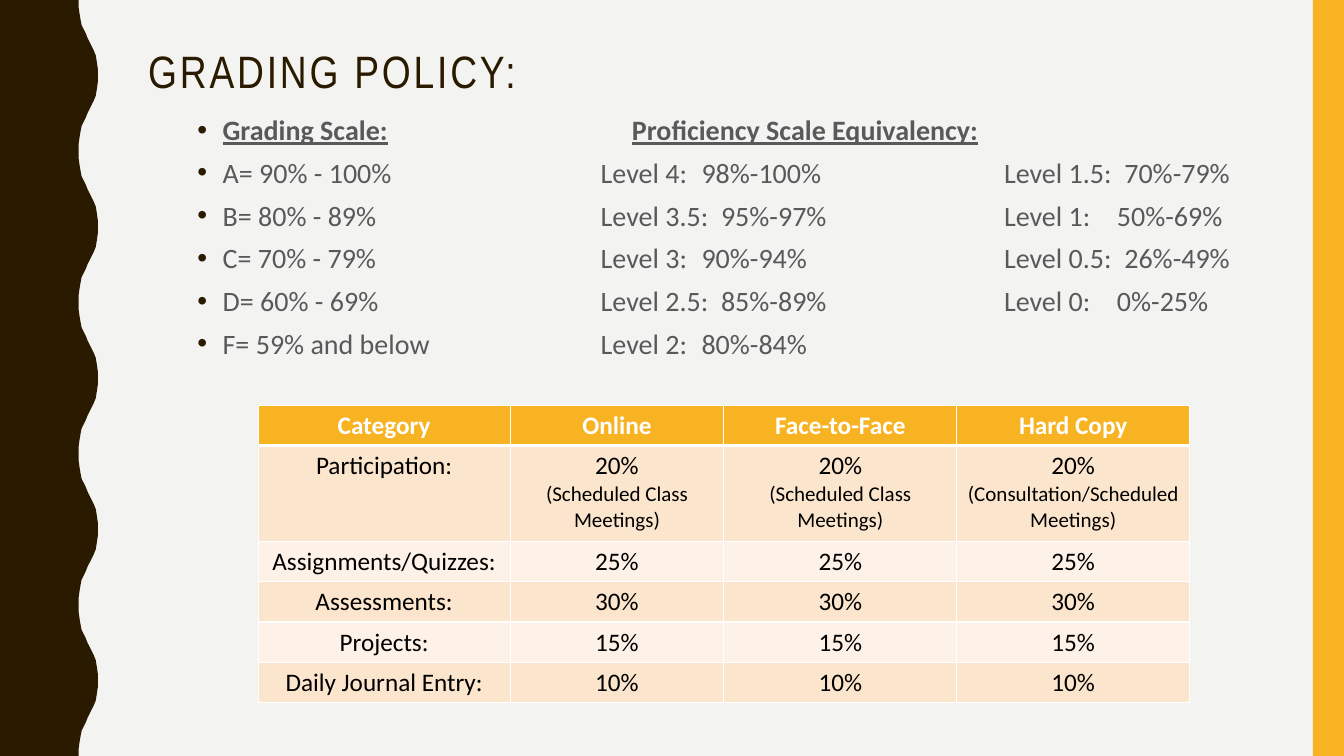
from lxml import etree
from pptx import Presentation
from pptx.dml.color import RGBColor
from pptx.enum.shapes import MSO_SHAPE
from pptx.enum.text import MSO_ANCHOR, MSO_AUTO_SIZE, PP_ALIGN
from pptx.oxml.ns import qn
from pptx.util import Inches, Pt

RECTANGLE = MSO_SHAPE.RECTANGLE
MIDDLE = MSO_ANCHOR.MIDDLE
NO_AUTOFIT = MSO_AUTO_SIZE.NONE
CENTER = PP_ALIGN.CENTER

COLORS = {
    "background": "F3F3F2", "brown": "2A1A00", "gold": "F8B323",
    "gray": "595959", "white": "FFFFFF", "black": "000000",
    "dark_band": "FCE5CD", "light_band": "FEF2E8",
}
TITLE_FONT = "Arial Narrow"
BODY_FONT = "Calibri"

WAVE_PERIOD = 1.5
HALF_WAVE = [
    (0.78, 0), (0.78, 0.07), (0.79, 0.14), (0.8, 0.2), (0.81, 0.25),
    (0.83, 0.29), (0.85, 0.33), (0.87, 0.38), (0.89, 0.42), (0.91, 0.46),
    (0.93, 0.5), (0.95, 0.55), (0.96, 0.61), (0.97, 0.68), (0.97, 0.75),
]

HEADING_STOPS = [4.31]
SCALE_STOPS = [4, 5, 8, 9.12]
SCALE_ROWS = [
    "A= 90% - 100%\tLevel 4:\t98%-100%\tLevel 1.5:  70%-79%",
    "B= 80% - 89%\tLevel 3.5:  95%-97%\tLevel 1:\t50%-69%",
    "C= 70% - 79%\tLevel 3:\t90%-94%\tLevel 0.5:  26%-49%",
    "D= 60% - 69%\tLevel 2.5:  85%-89%\tLevel 0:\t0%-25%",
    "F= 59% and below\tLevel 2:\t80%-84%",
]

COLUMN_WIDTHS = [2.5, 2.12, 2.31, 2.31]
ROW_HEIGHTS = [0.4, 0.95, 0.4, 0.4, 0.4, 0.4]
HEADERS = ["Category", "Online", "Face-to-Face", "Hard Copy"]
MEETINGS = "(Scheduled Class Meetings)"
CONSULTATION = "(Consultation/Scheduled Meetings)"
WEIGHTS = [("Assignments/Quizzes:", "25%"), ("Assessments:", "30%"),
           ("Projects:", "15%"), ("Daily Journal Entry:", "10%")]


def rgb(name):
    """Return the named colour."""
    return RGBColor.from_string(COLORS[name])


def add_run(paragraph, text, size, color, font=BODY_FONT, bold=False, underline=False):
    """Append one formatted run and return it."""
    run = paragraph.add_run()
    run.text = text
    run.font.name = font
    run.font.size = Pt(size)
    run.font.bold = bold
    run.font.underline = underline
    run.font.color.rgb = rgb(color)
    return run


def paint(shape, color):
    """Give a shape a flat fill without line or shadow."""
    shape.shadow.inherit = False
    shape.fill.solid()
    shape.fill.fore_color.rgb = rgb(color)
    shape.line.fill.background()


def add_wavy_edge(slide):
    """Draw the brown band with its repeating wave on the left."""
    mirrored = [(x, WAVE_PERIOD - y) for x, y in reversed(HALF_WAVE[:-1])]
    points = [(x, y + wave * WAVE_PERIOD)
              for wave in range(5) for x, y in HALF_WAVE + mirrored]
    points.append((0, 7.5))
    builder = slide.shapes.build_freeform(0, 0)
    builder.add_line_segments([(Inches(x), Inches(y)) for x, y in points], close=True)
    paint(builder.convert_to_shape(), "brown")


def add_side_bar(slide):
    """Draw the gold bar on the right."""
    bar = slide.shapes.add_shape(RECTANGLE, Inches(13.02), 0, Inches(0.31), Inches(7.5))
    paint(bar, "gold")


def set_title(slide, text):
    """Place and format the slide title."""
    title = slide.shapes.title
    title.left, title.top = Inches(1.37), Inches(0.42)
    title.width, title.height = Inches(11.13), Inches(0.62)
    frame = title.text_frame
    frame.auto_size = NO_AUTOFIT
    frame.vertical_anchor = MIDDLE
    paragraph = frame.paragraphs[0]
    paragraph.alignment = PP_ALIGN.LEFT
    paragraph.line_spacing = 0.9
    run = add_run(paragraph, text, 32.4, "brown", TITLE_FONT)
    run.font._element.set("spc", "200")


def add_bullet_and_tabs(paragraph, stops):
    """Give a paragraph a hanging bullet and left tab stops in inches."""
    properties = paragraph._p.get_or_add_pPr()
    properties.set("marL", str(Inches(0.25)))
    properties.set("indent", str(-Inches(0.25)))
    bullet_color = etree.SubElement(properties, qn("a:buClr"))
    etree.SubElement(bullet_color, qn("a:srgbClr"), val=COLORS["brown"])
    etree.SubElement(properties, qn("a:buFont"), typeface="Arial")
    etree.SubElement(properties, qn("a:buChar"), char="•")
    tab_list = etree.SubElement(properties, qn("a:tabLst"))
    for stop in stops:
        etree.SubElement(tab_list, qn("a:tab"), pos=str(Inches(stop)), algn="l")


def add_scales(slide):
    """Write the grading scale beside its proficiency levels."""
    box = slide.shapes.add_textbox(Inches(1.86), Inches(1.07), Inches(10.64), Inches(3.07))
    frame = box.text_frame
    frame.word_wrap = True
    heading = frame.paragraphs[0]
    add_bullet_and_tabs(heading, HEADING_STOPS)
    add_run(heading, "Grading Scale:", 20, "gray", bold=True, underline=True)
    add_run(heading, "\t", 20, "gray")
    add_run(heading, "Proficiency Scale Equivalency:", 20, "gray", bold=True, underline=True)
    for text in SCALE_ROWS:
        paragraph = frame.add_paragraph()
        add_bullet_and_tabs(paragraph, SCALE_STOPS)
        paragraph.space_before = Pt(6.5)
        add_run(paragraph, text, 20, "gray")


def set_borders(cell, bottom):
    """Draw white cell borders, with a bottom width in points."""
    properties = cell._tc.get_or_add_tcPr()
    widths = {"a:lnL": 1, "a:lnR": 1, "a:lnT": 1, "a:lnB": bottom}
    for position, (tag, width) in enumerate(widths.items()):
        line = etree.Element(qn(tag), w=str(Pt(width)))
        fill = etree.SubElement(line, qn("a:solidFill"))
        etree.SubElement(fill, qn("a:srgbClr"), val=COLORS["white"])
        properties.insert(position, line)


def fill_cell(cell, paragraphs, fill, color, header):
    """Write centred paragraphs of (text, size) runs in a coloured cell."""
    cell.fill.solid()
    cell.fill.fore_color.rgb = rgb(fill)
    set_borders(cell, 3 if header else 1)
    frame = cell.text_frame
    for index, runs in enumerate(paragraphs):
        paragraph = frame.add_paragraph() if index else frame.paragraphs[0]
        paragraph.alignment = CENTER
        for text, size in runs:
            add_run(paragraph, text, size, color, bold=header)


def add_weights_table(slide):
    """Build the table of category weights for each learning mode."""
    meetings = [[("20%", 18)], [(MEETINGS, 15)]]
    consultation = [[("20% ", 18), (CONSULTATION, 15)]]
    rows = [[[[(text, 18)]] for text in HEADERS],
            [[[("Participation:", 18)]], meetings, meetings, consultation]]
    for category, weight in WEIGHTS:
        rows.append([[[(text, 18)]] for text in [category] + [weight] * 3])
    table = slide.shapes.add_table(
        len(rows), len(HEADERS), Inches(2.56), Inches(4.02),
        Inches(sum(COLUMN_WIDTHS)), Inches(sum(ROW_HEIGHTS))).table
    table.horz_banding = False
    for column, width in zip(table.columns, COLUMN_WIDTHS):
        column.width = Inches(width)
    for index, (row, height) in enumerate(zip(table.rows, ROW_HEIGHTS)):
        row.height = Inches(height)
        header = index == 0
        band = "gold" if header else "dark_band" if index % 2 else "light_band"
        for cell, paragraphs in zip(row.cells, rows[index]):
            fill_cell(cell, paragraphs, band, "white" if header else "black", header)


def main():
    """Build and save the grading policy slide."""
    presentation = Presentation()
    presentation.slide_width = Inches(13.33)
    presentation.slide_height = Inches(7.5)
    slide = presentation.slides.add_slide(presentation.slide_layouts[5])
    slide.background.fill.solid()
    slide.background.fill.fore_color.rgb = rgb("background")
    add_wavy_edge(slide)
    add_side_bar(slide)
    set_title(slide, "GRADING POLICY:")
    add_scales(slide)
    add_weights_table(slide)
    presentation.save("out.pptx")


if __name__ == "__main__":
    main()
